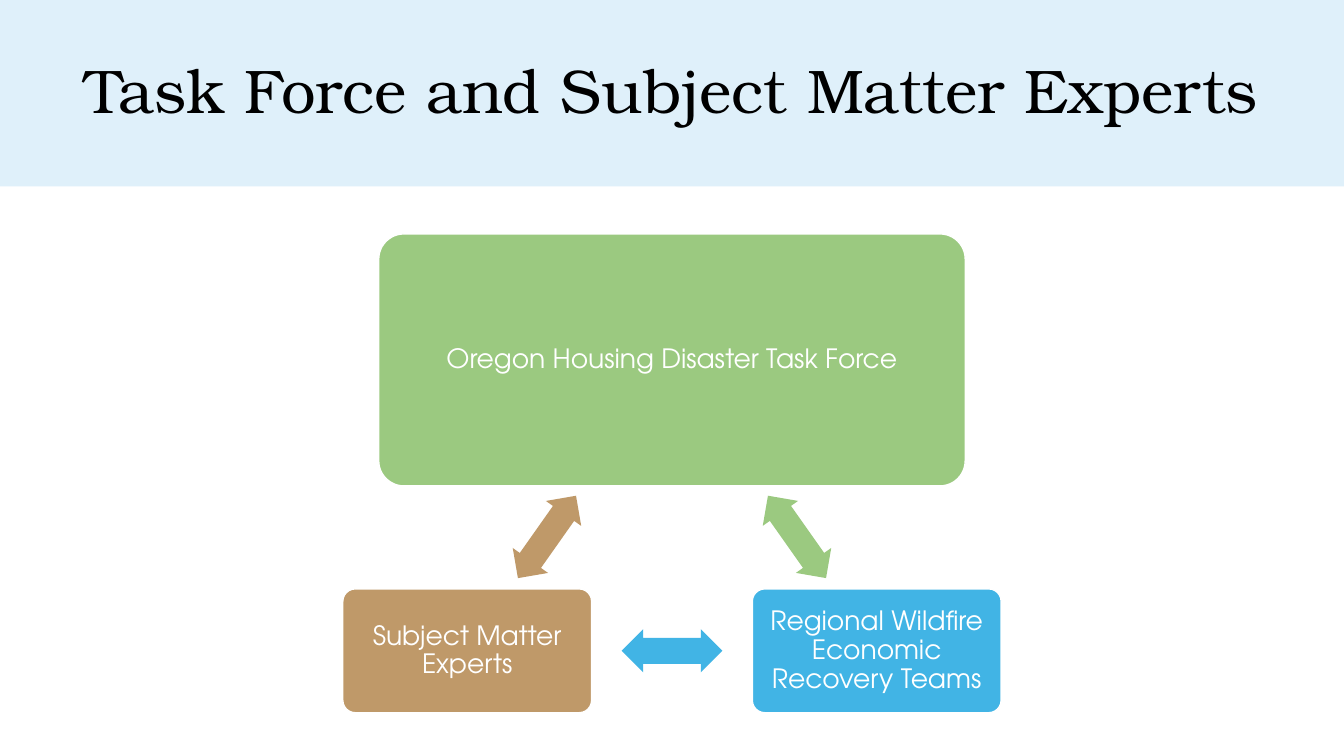
from dataclasses import dataclass

from pptx import Presentation
from pptx.dml.color import RGBColor
from pptx.enum.shapes import MSO_SHAPE
from pptx.enum.text import MSO_ANCHOR, PP_ALIGN
from pptx.util import Cm, Pt

RECT = MSO_SHAPE.RECTANGLE
ROUND = MSO_SHAPE.ROUNDED_RECTANGLE
ARROW = MSO_SHAPE.LEFT_RIGHT_ARROW
CENTER = PP_ALIGN.CENTER
MIDDLE = MSO_ANCHOR.MIDDLE


@dataclass(frozen=True)
class Theme:
    sky: str = "DFF0FA"
    green: str = "9BC980"
    blue: str = "41B4E5"
    tan: str = "BF9969"
    white: str = "FFFFFF"
    black: str = "000000"
    head_font: str = "TeX Gyre Bonum"
    body_font: str = "TeX Gyre Adventor"
    head_size: int = 44
    body_size: int = 19


THEME = Theme()

# Lengths in centimetres
WIDTH, HEIGHT = 33.87, 19.05
MID = WIDTH / 2
BANNER = 4.7
TOP_Y, LOW_Y = 9.07, 16.4      # centre lines of the two rows
LINK_Y = 13.53                 # centre line of the slanted arrows
TEAM_DX, LINK_DX = 5.16, 3.15  # distances from the middle axis
TEAM_SIZE = (6.27, 3.12)


def add_block(slide, kind, x, y, size, color):
    """Add a plain filled shape centred on x, y."""
    w, h = size
    shape = slide.shapes.add_shape(
        kind, Cm(x - w / 2), Cm(y - h / 2), Cm(w), Cm(h))
    shape.shadow.inherit = False
    shape.fill.solid()
    shape.fill.fore_color.rgb = RGBColor.from_string(color)
    shape.line.fill.background()
    return shape


def set_text(shape, text, font, size, color):
    frame = shape.text_frame
    frame.word_wrap = True
    frame.vertical_anchor = MIDDLE
    para = frame.paragraphs[0]
    para.text = text
    para.alignment = CENTER
    para.line_spacing = 0.9
    para.font.name = font
    para.font.size = Pt(size)
    para.font.color.rgb = RGBColor.from_string(color)


def add_title(slide, text):
    banner = add_block(slide, RECT, MID, BANNER / 2, (WIDTH, BANNER), THEME.sky)
    set_text(banner, text, THEME.head_font, THEME.head_size, THEME.black)


def add_box(slide, text, x, y, size, color):
    box = add_block(slide, ROUND, x, y, size, color)
    box.adjustments[0] = 0.1
    box.line.color.rgb = RGBColor.from_string(THEME.white)
    box.line.width = Pt(1)
    frame = box.text_frame
    frame.margin_left = frame.margin_right = Cm(0.2)
    frame.margin_top = frame.margin_bottom = Cm(0.2)
    set_text(box, text, THEME.body_font, THEME.body_size, THEME.white)


def add_link(slide, x, y, angle, color):
    link = add_block(slide, ARROW, x, y, (2.54, 1.09), color)
    link.adjustments[0] = 0.6
    link.adjustments[1] = 0.5
    link.rotation = angle


def main():
    deck = Presentation()
    deck.slide_width, deck.slide_height = Cm(WIDTH), Cm(HEIGHT)
    slide = deck.slides.add_slide(deck.slide_layouts[6])

    add_title(slide, "Task Force and Subject Matter Experts")

    # Groups
    add_box(slide, "Oregon Housing Disaster Task Force",
            MID, TOP_Y, (14.78, 6.35), THEME.green)
    add_box(slide, "Regional Wildfire Economic Recovery Teams",
            MID + TEAM_DX, LOW_Y, TEAM_SIZE, THEME.blue)
    add_box(slide, "Subject Matter Experts",
            MID - TEAM_DX, LOW_Y, TEAM_SIZE, THEME.tan)

    # Links between the groups
    add_link(slide, MID + LINK_DX, LINK_Y, 54.8, THEME.green)
    add_link(slide, MID, LOW_Y, 180, THEME.blue)
    add_link(slide, MID - LINK_DX, LINK_Y, 305.2, THEME.tan)

    deck.save("out.pptx")


if __name__ == "__main__":
    main()
